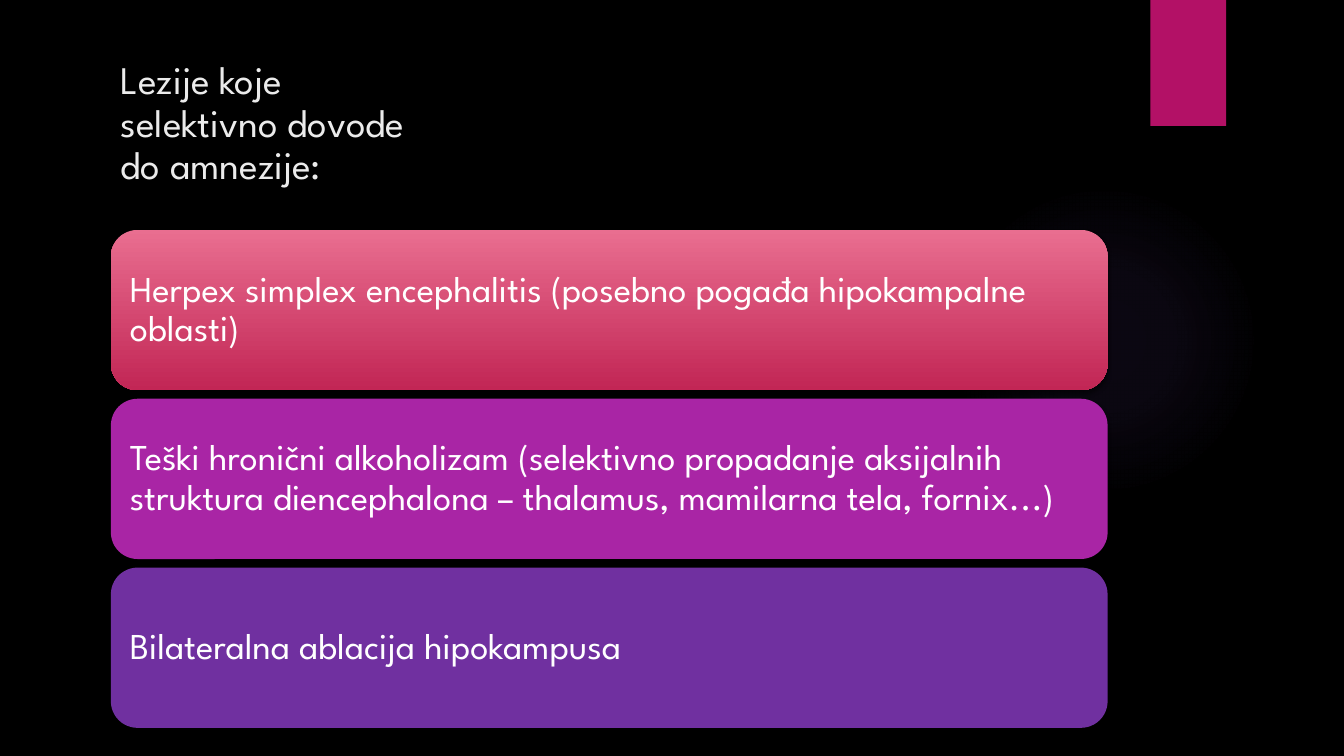
from dataclasses import dataclass

from lxml.etree import SubElement
from pptx import Presentation
from pptx.dml.color import RGBColor
from pptx.enum.shapes import MSO_SHAPE
from pptx.enum.text import MSO_ANCHOR, PP_ALIGN
from pptx.oxml.ns import qn
from pptx.util import Pt

FONT = "League Spartan"
LEFT, TOP, WIDTH, HEIGHT, PITCH = 79.2, 164.2, 712, 114.5, 120.6


@dataclass
class Card:
    text: str
    fills: tuple[str, ...]


CARDS = [
    Card("Herpex simplex encephalitis (posebno pogađa hipokampalne oblasti)",
         ("E96E90", "C22655")),
    Card("Teški hronični alkoholizam (selektivno propadanje aksijalnih "
         "struktura diencephalona – thalamus, mamilarna tela, fornix...)",
         ("A925A5",)),
    Card("Bilateralna ablacija hipokampusa", ("7030A0",)),
]


def color(code: str) -> RGBColor:
    return RGBColor.from_string(code)


def paint(fill, codes: tuple[str, ...]) -> None:
    if len(codes) == 1:
        fill.solid()
        fill.fore_color.rgb = color(codes[0])
        return
    fill.gradient()
    fill.gradient_angle = 270
    for stop, code in zip(fill.gradient_stops, codes):
        stop.color.rgb = color(code)


def tint(parent, code: str, alpha: int) -> None:
    node = SubElement(parent, qn("a:srgbClr"), val=code)
    SubElement(node, qn("a:alpha"), val=str(alpha * 1000))


def shade(shape) -> None:
    shape.shadow.inherit = False
    effects = shape.element.spPr.find(qn("a:effectLst"))
    outer = SubElement(effects, qn("a:outerShdw"), blurRad=str(Pt(3)),
                       dist=str(Pt(2)), dir="5400000", rotWithShape="0")
    tint(outer, "000000", 45)


def block(slide, kind, left: float, top: float, width: float, height: float,
          codes: tuple[str, ...]):
    shape = slide.shapes.add_shape(kind, Pt(left), Pt(top), Pt(width), Pt(height))
    paint(shape.fill, codes)
    shape.line.fill.background()
    shade(shape)
    return shape


def glow(slide) -> None:
    shape = block(slide, MSO_SHAPE.OVAL, 677.5, 131.8, 221.8, 221.8,
                  ("9B6BF2", "9B6BF2"))
    shape.shadow.inherit = False
    for node in shape.element.spPr.findall(qn("a:effectLst")):
        for child in list(node):
            node.remove(child)
    grad = shape.element.spPr.find(qn("a:gradFill"))
    for child in list(grad):
        grad.remove(child)
    stops = SubElement(grad, qn("a:gsLst"))
    for place, alpha in ((0, 7), (36, 6), (69, 0), (100, 0)):
        stop = SubElement(stops, qn("a:gs"), pos=str(place * 1000))
        tint(stop, "9B6BF2", alpha)
    shape_path = SubElement(grad, qn("a:path"), path="circle")
    SubElement(shape_path, qn("a:fillToRect"), l="50000", t="50000",
               r="50000", b="50000")


def write(shape, text: str, *, size: float, code: str, side: float,
          edge: float = 0) -> None:
    frame = shape.text_frame
    frame.word_wrap = True
    frame.vertical_anchor = MSO_ANCHOR.MIDDLE
    frame.margin_left = frame.margin_right = Pt(side)
    frame.margin_top = frame.margin_bottom = Pt(edge)
    line = frame.paragraphs[0]
    line.alignment = PP_ALIGN.LEFT
    line.line_spacing = 0.9
    run = line.add_run()
    run.text = text
    run.font.name = FONT
    run.font.size = Pt(size)
    run.font.color.rgb = color(code)


def main() -> None:
    deck = Presentation()
    deck.slide_width, deck.slide_height = Pt(960), Pt(540)
    slide = deck.slides.add_slide(deck.slide_layouts[6])
    paint(slide.background.fill, ("000000",))
    glow(slide)
    block(slide, MSO_SHAPE.RECTANGLE, 821.8, 0, 54, 90, ("B31166",))
    title = slide.shapes.add_textbox(Pt(LEFT), Pt(43.6), Pt(244.8), Pt(90.7))
    write(title, "Lezije koje selektivno dovode do amnezije:",
          size=27.9, code="EBEBEB", side=7.2)
    for row, card in enumerate(CARDS):
        shape = block(slide, MSO_SHAPE.ROUNDED_RECTANGLE, LEFT,
                      TOP + row * PITCH, WIDTH, HEIGHT, card.fills)
        write(shape, card.text, size=26, code="FFFFFF", side=8, edge=8)
    deck.save("out.pptx")


if __name__ == "__main__":
    main()
